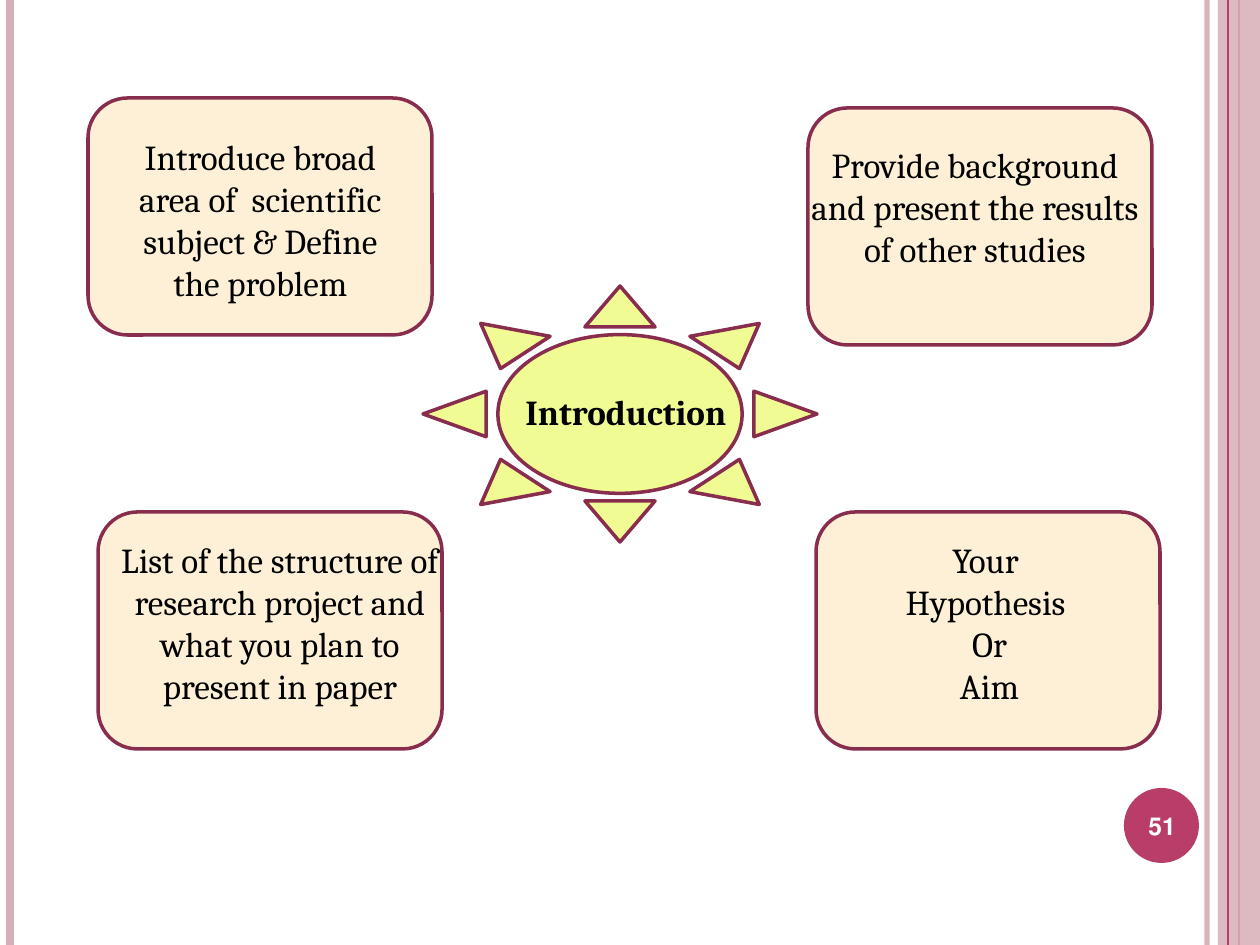
"""Build the slide on the four parts of a paper's introduction."""
from typing import NamedTuple, Optional

from lxml import etree
from pptx import Presentation
from pptx import util as u
from pptx.dml.color import RGBColor
from pptx.enum import shapes, text
from pptx.oxml.ns import qn

PX_PER_INCH = 126
SLIDE_W, SLIDE_H = 1260, 945
CARD_W, CARD_H = 344, 237

PINK = RGBColor(0xD8, 0xAF, 0xB9)
CRIMSON = RGBColor(0xB8, 0x3D, 0x68)
PLUM = RGBColor(0x88, 0x2D, 0x4D)
LIME = RGBColor(0xF1, 0xFB, 0x93)
CREAM = RGBColor(0xFE, 0xF0, 0xD7)
BLACK = RGBColor(0, 0, 0)
WHITE = RGBColor(0xFF, 0xFF, 0xFF)


class Box(NamedTuple):
    left: int
    top: int
    width: int
    height: int


class Stripe(NamedTuple):
    x: int
    color: RGBColor
    weight: float
    opacity: int = 100


class Card(NamedTuple):
    left: int
    top: int
    label: Box
    wording: str


BACK_STRIPES = [Stripe(1207, PINK, 3, 93), Stripe(10, PINK, 4.5), Stripe(1239, CRIMSON, 1.5)]
FRONT_STRIPE = Stripe(1228, CRIMSON, 0.75)
CARDS = [
    Card(808, 108, Box(798, 137, 354, 183),
         "Provide background and present the results of other studies"),
    Card(816, 512, Box(837, 532, 305, 224), "Your \nHypothesis \nOr\nAim"),
    Card(88, 98, Box(108, 129, 305, 183),
         "Introduce broad area of  scientific subject & Define the problem"),
    Card(98, 512, Box(98, 532, 364, 183),
         "List of the structure of research project and what you plan to present in paper"),
]


def px(length: int) -> u.Emu:
    return u.Emu(round(length * u.Inches(1) / PX_PER_INCH))


def set_opacity(properties, percent: int) -> None:
    color = next(properties.iter(qn("a:srgbClr")))
    etree.SubElement(color, qn("a:alpha")).set("val", str(percent * 1000))


def add_stripe(slide, stripe: Stripe) -> None:
    rule = slide.shapes.add_connector(
        shapes.MSO_CONNECTOR.STRAIGHT, px(stripe.x), 0, px(stripe.x), px(SLIDE_H))
    rule.line.color.rgb = stripe.color
    rule.line.width = u.Pt(stripe.weight)
    properties = rule._element.spPr
    if stripe.opacity < 100:
        set_opacity(properties, stripe.opacity)
    etree.SubElement(properties, qn("a:effectLst"))


def add_figure(slide, preset, box: Box, fill: RGBColor, outline: Optional[RGBColor] = None):
    figure = slide.shapes.add_shape(preset, *map(px, box))
    figure.shadow.inherit = False
    figure.fill.solid()
    figure.fill.fore_color.rgb = fill
    if outline is None:
        figure.line.fill.background()
    else:
        figure.line.color.rgb = outline
        figure.line.width = u.Pt(2)
    return figure


def add_label(slide, box: Box, wording: str, color: RGBColor = BLACK, **formats):
    frame = slide.shapes.add_textbox(*map(px, box)).text_frame
    frame.word_wrap = True
    frame.text = wording
    values = {"name": "Cambria", "size": u.Pt(20), "bold": False} | formats
    for paragraph in frame.paragraphs:
        paragraph.alignment = text.PP_ALIGN.CENTER
        for run in paragraph.runs:
            run.font.color.rgb = color
            for attribute, value in values.items():
                setattr(run.font, attribute, value)
    return frame


def add_page_number(slide) -> None:
    add_figure(slide, shapes.MSO_SHAPE.OVAL, Box(1124, 788, 75, 75), CRIMSON)
    number = add_label(slide, Box(1120, 790, 84, 72), "51", WHITE, size=u.Pt(14), bold=True)
    number.vertical_anchor = text.MSO_ANCHOR.MIDDLE
    number.paragraphs[0]._p.get_or_add_pPr().set("rtl", "1")


def add_card(slide, card: Card) -> None:
    add_figure(slide, shapes.MSO_SHAPE.ROUNDED_RECTANGLE,
               Box(card.left, card.top, CARD_W, CARD_H), CREAM, PLUM)
    add_label(slide, card.label, card.wording)


def main() -> None:
    deck = Presentation()
    deck.slide_width, deck.slide_height = px(SLIDE_W), px(SLIDE_H)
    slide = deck.slides.add_slide(deck.slide_layouts[6])

    for stripe in BACK_STRIPES:
        add_stripe(slide, stripe)
    band = add_figure(slide, shapes.MSO_SHAPE.RECTANGLE, Box(1218, 0, 42, SLIDE_H), PINK)
    set_opacity(band._element.spPr, 87)
    add_stripe(slide, FRONT_STRIPE)
    add_page_number(slide)

    sun = add_figure(slide, shapes.MSO_SHAPE.SUN, Box(423, 286, 394, 256), LIME, PLUM)
    sun.adjustments[0] = 0.19
    add_label(slide, Box(493, 384, 266, 55), "Introduction", bold=True)
    for card in CARDS:
        add_card(slide, card)

    deck.save("out.pptx")


if __name__ == "__main__":
    main()
